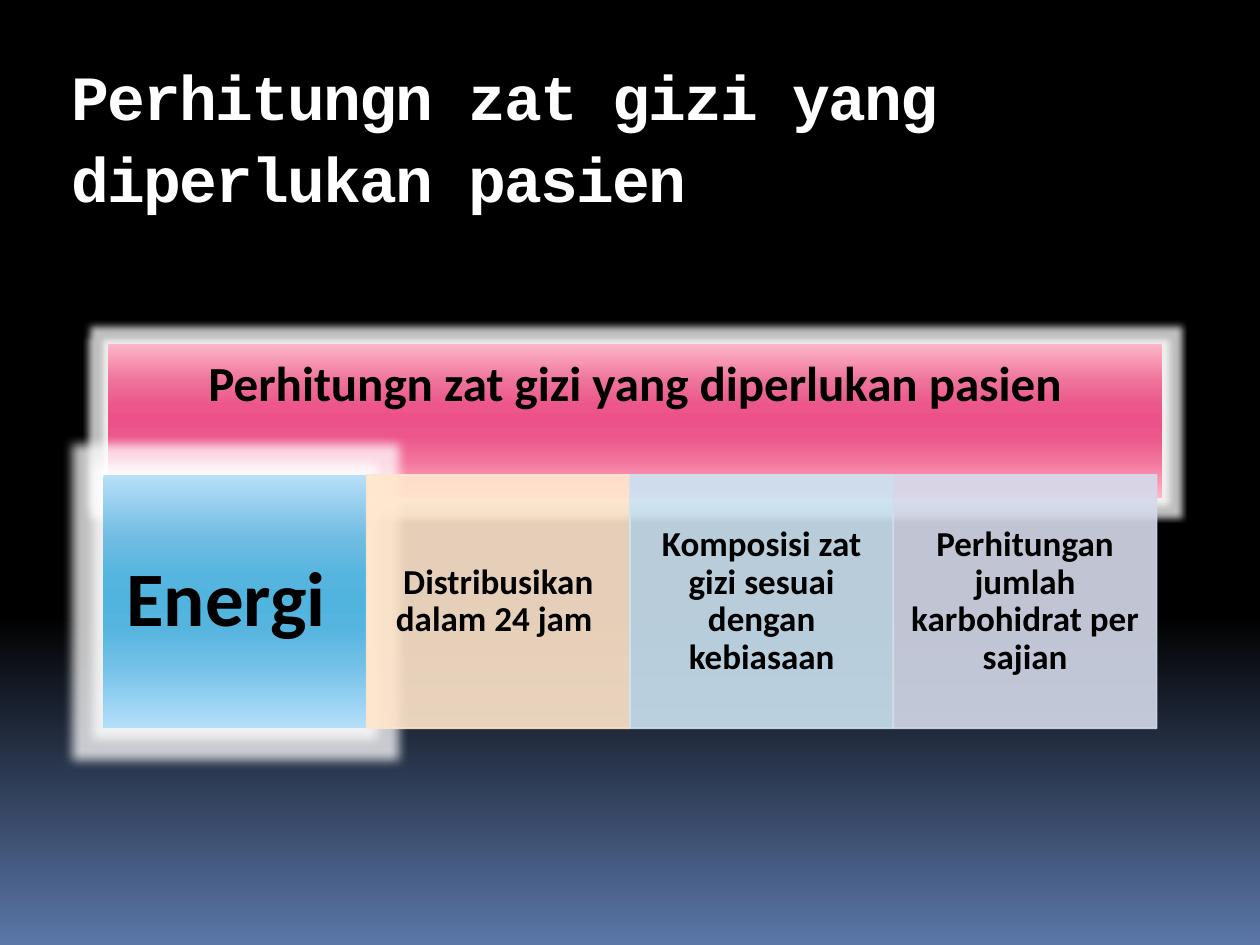
from lxml import etree
from pptx import Presentation
from pptx.dml.color import RGBColor
from pptx.enum.shapes import MSO_SHAPE
from pptx.enum.text import MSO_ANCHOR, PP_ALIGN
from pptx.oxml.ns import qn
from pptx.util import Inches, Pt

RECTANGLE = MSO_SHAPE.RECTANGLE
TOP, MIDDLE = MSO_ANCHOR.TOP, MSO_ANCHOR.MIDDLE
LEFT, CENTER = PP_ALIGN.LEFT, PP_ALIGN.CENTER

# Content
TITLE = "Perhitungn zat gizi yang diperlukan pasien"
ENERGY = "Energi "
STEPS = [
    ("Distribusikan dalam 24 jam ", "FFE6CC"),
    ("Komposisi zat gizi sesuai dengan kebiasaan", "CCE3F2"),
    ("Perhitungan jumlah karbohidrat per sajian", "D5DAEB"),
]

# Gradients, top to bottom: (percent, colour)
NIGHT = [(0, "000000"), (65, "000000"), (100, "5B77A8")]
PINK = [(0, "FFB6C9"), (25, "ED7198"), (40, "EC568B"), (50, "EC5289"),
        (60, "EC568B"), (75, "F2729A"), (100, "FFB6C9")]
BLUE = [(0, "B7DFF8"), (25, "70BCE2"), (40, "55B5DF"), (50, "50B4DF"),
        (60, "55B5DF"), (75, "72C0E7"), (100, "B4DFFB")]

# Layout in inches
BAR = (0.86, 2.73, 8.36, 1.22)
BAR_TEXT_HEIGHT = 0.66
CELL_LEFT, CELL_TOP, CELL_WIDTH, CELL_HEIGHT = 0.82, 3.77, 2.09, 2.01
CELL_INSETS = (0.09, 0.02, 0.09, 0.02)


def color(code):
    return RGBColor.from_string(code)


def add_color(parent, code, opacity=100):
    node = etree.SubElement(parent, qn("a:srgbClr"), val=code)
    if opacity < 100:
        etree.SubElement(node, qn("a:alpha"), val=str(opacity * 1000))


def set_gradient(owner, fill, stops):
    fill.gradient()
    fill.gradient_angle = 270
    stop_list = owner.find(".//" + qn("a:gsLst"))
    for old in list(stop_list):
        stop_list.remove(old)
    for percent, code in stops:
        add_color(etree.SubElement(stop_list, qn("a:gs"), pos=str(percent * 1000)), code)


def add_glow(shape, points):
    effects = shape.element.spPr.find(qn("a:effectLst"))
    glow = etree.SubElement(effects, qn("a:glow"), rad=str(Pt(points)))
    add_color(glow, "FFFFFF", 75)


def add_rectangle(page, place):
    shape = page.shapes.add_shape(RECTANGLE, *map(Inches, place))
    shape.shadow.inherit = False
    shape.line.fill.background()
    return shape


def write(shape, text, size, font, code, insets, anchor=MIDDLE, align=CENTER, spacing=0.9):
    frame = shape.text_frame
    frame.word_wrap = True
    frame.vertical_anchor = anchor
    (frame.margin_left, frame.margin_top,
     frame.margin_right, frame.margin_bottom) = map(Inches, insets)
    para = frame.paragraphs[0]
    para.alignment = align
    para.line_spacing = spacing
    span = para.add_run()
    span.text = text
    span.font.size = Pt(size)
    span.font.name = font
    span.font.bold = True
    span.font.color.rgb = color(code)
    return span


def cell_place(column):
    return CELL_LEFT + column * CELL_WIDTH, CELL_TOP, CELL_WIDTH, CELL_HEIGHT


def main():
    deck = Presentation()
    deck.slide_width, deck.slide_height = Inches(10), Inches(7.5)
    page = deck.slides.add_slide(deck.slide_layouts[6])
    set_gradient(page.element, page.background.fill, NIGHT)

    # Pink heading bar, its text in the upper part
    bar = add_rectangle(page, BAR)
    set_gradient(bar.element, bar.fill, PINK)
    add_glow(bar, 7)
    bottom = BAR[3] - BAR_TEXT_HEIGHT + 0.16
    write(bar, TITLE, 28, "Calibri", "000000", (0.16, 0.16, 0.16, bottom))

    # Highlighted first cell
    energy = add_rectangle(page, cell_place(0))
    set_gradient(energy.element, energy.fill, BLUE)
    add_glow(energy, 12)
    write(energy, ENERGY, 44, "Calibri", "000000", CELL_INSETS)

    # Pale cells
    for column, (text, code) in enumerate(STEPS, start=1):
        cell = add_rectangle(page, cell_place(column))
        cell.fill.solid()
        cell.fill.fore_color.rgb = color(code)
        cell.line.color.rgb = color(code)
        cell.line.width = Pt(0.94)
        for tone in cell.element.spPr.iter(qn("a:srgbClr")):
            etree.SubElement(tone, qn("a:alpha"), val="90000")
        write(cell, text, 20, "Calibri", "000000", CELL_INSETS)

    # Slide title
    title = page.shapes.add_textbox(*map(Inches, (0.47, 0.31, 9.53, 1)))
    span = write(title, TITLE, 36, "Courier New", "FFFFFF", (0.1, 0.1, 0.1, 0.05),
                 TOP, LEFT, 1.08)
    span.font.element.set("spc", "-100") if hasattr(span.font, "element") else \
        title.element.find(".//" + qn("a:rPr")).set("spc", "-100")

    deck.save("out.pptx")


if __name__ == "__main__":
    main()
